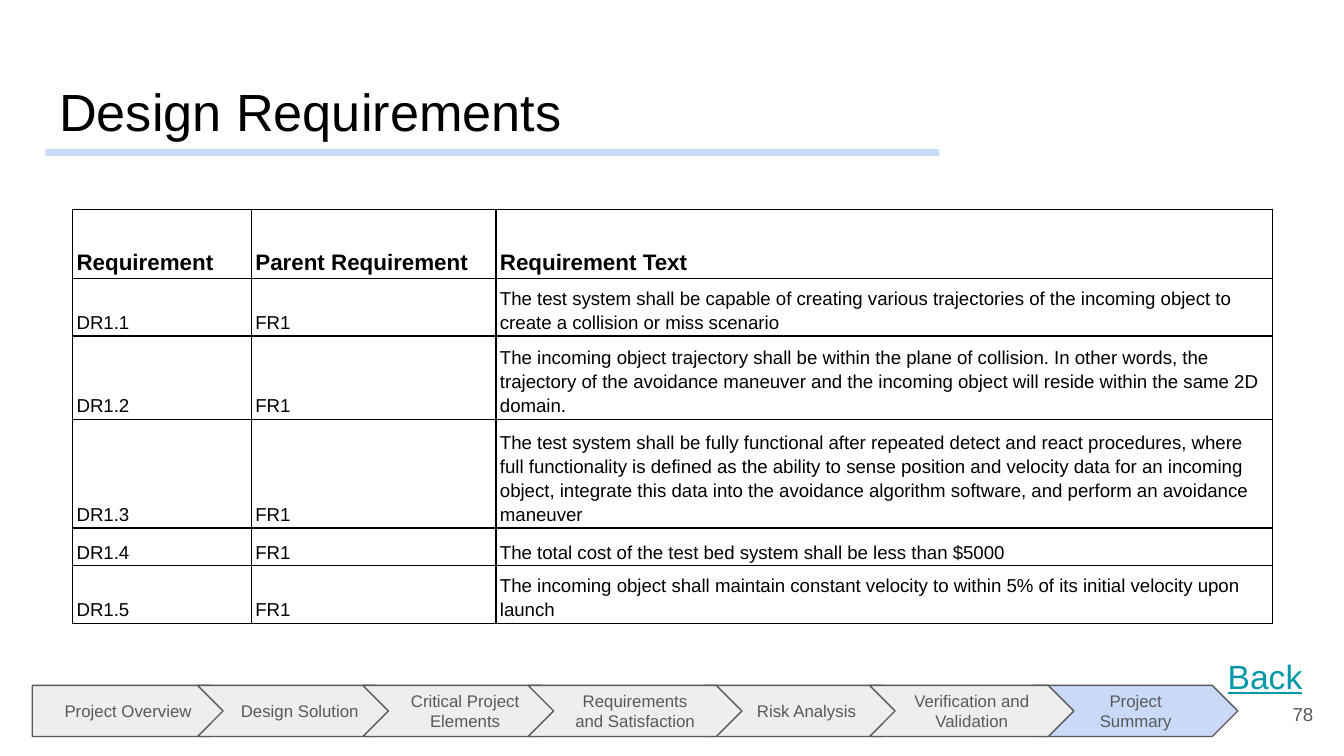
from lxml import etree
from pptx import Presentation
from pptx.dml.color import RGBColor
from pptx.enum import shapes, text
from pptx.oxml import ns
from pptx.util import Inches, Pt

COLORS = {"black": "000000", "gray": "595959", "light": "EEEEEE",
          "blue": "C9DAF8", "link": "0097A7"}
ALIGN = text.PP_ALIGN
ANCHOR = text.MSO_ANCHOR


def add_text(frame, content, size, color, align=ALIGN.LEFT, anchor=ANCHOR.MIDDLE):
    """Fill the first paragraph of a frame and return its paragraph and run."""
    frame.word_wrap = True
    frame.auto_size = text.MSO_AUTO_SIZE.NONE
    frame.vertical_anchor = anchor
    frame.margin_left = frame.margin_right = Inches(0.1)
    frame.margin_top = frame.margin_bottom = Inches(0.1)
    paragraph = frame.paragraphs[0]
    paragraph.alignment = align
    paragraph.space_before = Pt(0)
    run = paragraph.add_run()
    run.text = content
    run.font.name = "Arial"
    run.font.size = Pt(size)
    run.font.color.rgb = RGBColor.from_string(COLORS[color])
    return paragraph, run


def add_block(preset, left, top, width, height, fill):
    shape = slide.shapes.add_shape(
        preset, Inches(left), Inches(top), Inches(width), Inches(height))
    shape.shadow.inherit = False
    shape.fill.solid()
    shape.fill.fore_color.rgb = RGBColor.from_string(COLORS[fill])
    shape.line.fill.background()
    return shape


presentation = Presentation()
presentation.slide_width = Inches(10)
presentation.slide_height = Inches(10) * 9 // 16
slide = presentation.slides.add_slide(presentation.slide_layouts[1])

# Title and its rule
title = slide.shapes.title
title.left, title.top = Inches(0.34), Inches(0.49)
title.width, title.height = Inches(9.32), Inches(0.63)
add_text(title.text_frame, "Design Requirements", 28, "black", anchor=ANCHOR.TOP)
add_block(shapes.MSO_SHAPE.RECTANGLE, 0.34, 1.11, 6.65, 0.05, "blue")

# Progress bar, from back to front
steps = [
    ("Project Overview", 0.24, 1.52),
    ("Design Solution", 1.47, 1.52),
    ("Critical Project Elements", 2.7, 1.52),
    ("Project Summary", 7.69, 1.52),
    ("Risk Analysis", 5.24, 1.52),
    ("Requirements and Satisfaction", 3.93, 1.59),
    ("Verification and Validation", 6.47, 1.52),
]
for index, (label, left, width) in enumerate(steps):
    preset = shapes.MSO_SHAPE.CHEVRON if index else shapes.MSO_SHAPE.PENTAGON
    fill = "blue" if label == "Project Summary" else "light"
    step = add_block(preset, left, 5.1, width, 0.38, fill)
    step.line.color.rgb = RGBColor.from_string(COLORS["gray"])
    step.line.width = Pt(0.75)
    add_text(step.text_frame, label, 9, "gray", ALIGN.CENTER)

page_number = slide.shapes.add_textbox(
    Inches(9.27), Inches(5.1), Inches(0.6), Inches(0.43))
add_text(page_number.text_frame, "78", 10, "gray", ALIGN.RIGHT)

# Body text, resting on the bottom edge of its box
body = slide.placeholders[1]
body.left, body.top = Inches(7.2), Inches(1.38)
body.width, body.height = Inches(2.59), Inches(3.8)
paragraph, run = add_text(
    body.text_frame, "Back", 18, "link", ALIGN.RIGHT, ANCHOR.BOTTOM)
body.text_frame.margin_bottom = 0
properties = paragraph._p.get_or_add_pPr()
properties.set("marL", "0")
properties.set("indent", "0")
etree.SubElement(properties, ns.qn("a:buNone"))
paragraph.line_spacing = 1.15
run.font.underline = True

# Requirements table
rows = [
    ("Requirement", "Parent Requirement", "Requirement Text"),
    ("DR1.1", "FR1", "The test system shall be capable of creating various "
     "trajectories of the incoming object to create a collision or miss scenario"),
    ("DR1.2", "FR1", "The incoming object trajectory shall be within the plane of "
     "collision. In other words, the trajectory of the avoidance maneuver and the "
     "incoming object will reside within the same 2D domain."),
    ("DR1.3", "FR1", "The test system shall be fully functional after repeated detect "
     "and react procedures, where full functionality is defined as the ability to "
     "sense position and velocity data for an incoming object, integrate this data "
     "into the avoidance algorithm software, and perform an avoidance maneuver"),
    ("DR1.4", "FR1", "The total cost of the test bed system shall be less than $5000"),
    ("DR1.5", "FR1", "The incoming object shall maintain constant velocity to within "
     "5% of its initial velocity upon launch"),
]
column_widths = [1.33, 1.82, 5.78]
row_heights = [0.51, 0.43, 0.62, 0.81, 0.28, 0.43]
table = slide.shapes.add_table(
    len(rows), len(column_widths), Inches(0.54), Inches(1.56),
    Inches(sum(column_widths)), Inches(sum(row_heights))).table
table.first_row = table.horz_banding = False
for column, width in zip(table.columns, column_widths):
    column.width = Inches(width)
for row, height, values in zip(table.rows, row_heights, rows):
    row.height = Inches(height)
    header = values is rows[0]
    for cell, value in zip(row.cells, values):
        paragraph, run = add_text(
            cell.text_frame, value, 12 if header else 10, "black")
        paragraph.line_spacing = 1.15
        run.font.bold = header
        cell.vertical_anchor = ANCHOR.BOTTOM
        cell.margin_left = cell.margin_right = Inches(0.03)
        cell.margin_top = cell.margin_bottom = Inches(0.02)
        cell_properties = cell._tc.get_or_add_tcPr()
        for edge in ("lnL", "lnR", "lnT", "lnB"):
            border = etree.SubElement(
                cell_properties, ns.qn(f"a:{edge}"), w=str(Pt(0.75)))
            solid = etree.SubElement(border, ns.qn("a:solidFill"))
            etree.SubElement(solid, ns.qn("a:srgbClr"), val=COLORS["black"])
        cell.fill.background()

presentation.save("out.pptx")
